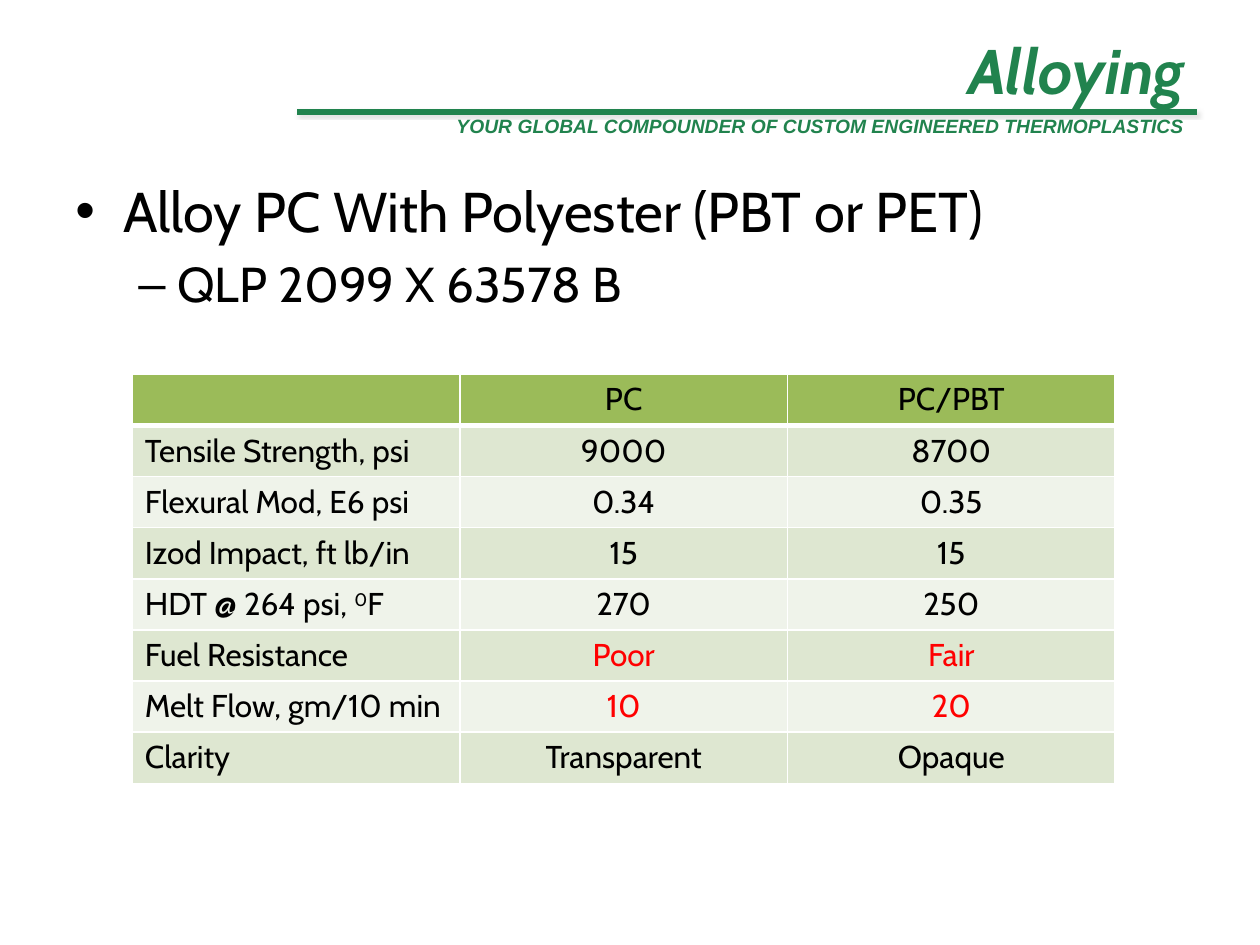
from dataclasses import dataclass

from lxml import etree
from pptx import Presentation
from pptx.dml.color import RGBColor
from pptx.enum.shapes import MSO_CONNECTOR
from pptx.enum.text import MSO_ANCHOR, PP_ALIGN
from pptx.oxml.ns import qn
from pptx.util import Inches, Pt

LEFT, MID, RIGHT = PP_ALIGN.LEFT, PP_ALIGN.CENTER, PP_ALIGN.RIGHT
TOP, BOTTOM = MSO_ANCHOR.TOP, MSO_ANCHOR.BOTTOM
STRAIGHT = MSO_CONNECTOR.STRAIGHT
GREEN, BLACK, RED, WHITE = "21834E", "000000", "FF0000", "FFFFFF"
HEAD, BANDS = "9BBB59", ("DEE7D1", "EFF3EA")


@dataclass
class Style:
    size: int
    color: str = BLACK
    face: str = "Cabin"
    strong: bool = False


@dataclass
class Bullet:
    text: str
    size: int
    mark: str
    level: int
    left: float
    hang: float
    before: int


@dataclass
class Row:
    label: str
    pure: str
    alloy: str
    color: str = BLACK


BULLETS = [
    Bullet("Alloy PC With Polyester (PBT or PET)", 32, "•", 0, 0.38, 0.38, 0),
    Bullet("QLP 2099 X 63578 B", 28, "–", 1, 0.81, 0.31, 6),
]
ROWS = [
    Row("", "PC", "PC/PBT"),
    Row("Tensile Strength, psi", "9000", "8700"),
    Row("Flexural Mod, E6 psi", "0.34", "0.35"),
    Row("Izod Impact, ft lb/in", "15", "15"),
    Row("HDT @ 264 psi, ^0^F", "270", "250"),
    Row("Fuel Resistance", "Poor", "Fair", RED),
    Row("Melt Flow, gm/10 min", "10", "20", RED),
    Row("Clarity", "Transparent", "Opaque"),
]


def rgb(code: str) -> RGBColor:
    return RGBColor.from_string(code)


def add_text(para, text: str, style: Style) -> None:
    for i, part in enumerate(text.split("^")):
        run = para.add_run()
        run.text = part
        font = run.font
        font.size, font.name = Pt(style.size), style.face
        font.bold = font.italic = style.strong
        font.color.rgb = rgb(style.color)
        if i % 2:
            run._r.get_or_add_rPr().set("baseline", "30000")


def add_box(slide, left: float, top: float, width: float, height: float, anchor):
    box = slide.shapes.add_textbox(
        Inches(left), Inches(top), Inches(width), Inches(height))
    frame = box.text_frame
    frame.word_wrap = True
    frame.vertical_anchor = anchor
    return frame


def add_label(slide, text: str, top: float, height: float, anchor, style: Style) -> None:
    para = add_box(slide, 2.36, top, 7.14, height, anchor).paragraphs[0]
    para.alignment = RIGHT
    add_text(para, text, style)


def add_rule(slide, shaded: bool) -> None:
    rule = slide.shapes.add_connector(
        STRAIGHT, Inches(2.36), Inches(0.89), Inches(9.5), Inches(0.89))
    rule.line.color.rgb = rgb(GREEN)
    rule.line.width = Pt(3)
    effects = etree.SubElement(rule._element.spPr, qn("a:effectLst"))
    if shaded:
        shade = etree.SubElement(
            effects, qn("a:outerShdw"), blurRad=str(Pt(2)), dist=str(Pt(1)),
            dir="2700000", algn="ctr", rotWithShape="0")
        tint = etree.SubElement(shade, qn("a:srgbClr"), val="808080")
        etree.SubElement(tint, qn("a:alpha"), val="25000")


def add_bullets(slide, items: list[Bullet]) -> None:
    frame = add_box(slide, 0.5, 1.35, 9, 1.3, TOP)
    for i, item in enumerate(items):
        para = frame.add_paragraph() if i else frame.paragraphs[0]
        para.level = item.level
        para.space_before = Pt(item.before)
        props = para._p.get_or_add_pPr()
        props.set("marL", str(Inches(item.left)))
        props.set("indent", str(-Inches(item.hang)))
        etree.SubElement(props, qn("a:buFont"), typeface="Arial")
        etree.SubElement(props, qn("a:buChar"), char=item.mark)
        add_text(para, item.text, Style(item.size))


def add_edges(cell, under: int) -> None:
    props = cell._tc.get_or_add_tcPr()
    for side, width in (("L", 1), ("R", 1), ("T", 1), ("B", under)):
        edge = etree.SubElement(props, qn(f"a:ln{side}"), w=str(Pt(width)))
        fill = etree.SubElement(edge, qn("a:solidFill"))
        etree.SubElement(fill, qn("a:srgbClr"), val=WHITE)


def add_grid(slide, rows: list[Row]) -> None:
    grid = slide.shapes.add_table(
        len(rows), 3, Inches(1.05), Inches(2.97), Inches(7.8), Inches(3.25)).table
    for i, row in enumerate(rows):
        tone = BANDS[(i - 1) % 2] if i else HEAD
        for j, text in enumerate((row.label, row.pure, row.alloy)):
            cell = grid.cell(i, j)
            add_edges(cell, 1 if i else 3)
            cell.fill.solid()
            cell.fill.fore_color.rgb = rgb(tone)
            if text:
                para = cell.text_frame.paragraphs[0]
                para.alignment = MID if j else LEFT
                add_text(para, text, Style(18, row.color if j else BLACK))


def main() -> None:
    deck = Presentation()
    deck.slide_width, deck.slide_height = Inches(10), Inches(7.5)
    slide = deck.slides.add_slide(deck.slide_layouts[6])
    for shaded in (False, True):
        add_rule(slide, shaded)
    add_label(slide, "YOUR GLOBAL COMPOUNDER OF CUSTOM ENGINEERED THERMOPLASTICS",
              0.86, 0.29, TOP, Style(11, GREEN, "Arial", True))
    add_label(slide, "Alloying", 0, 0.9, BOTTOM, Style(36, GREEN, strong=True))
    add_bullets(slide, BULLETS)
    add_grid(slide, ROWS)
    deck.save("out.pptx")


if __name__ == "__main__":
    main()
